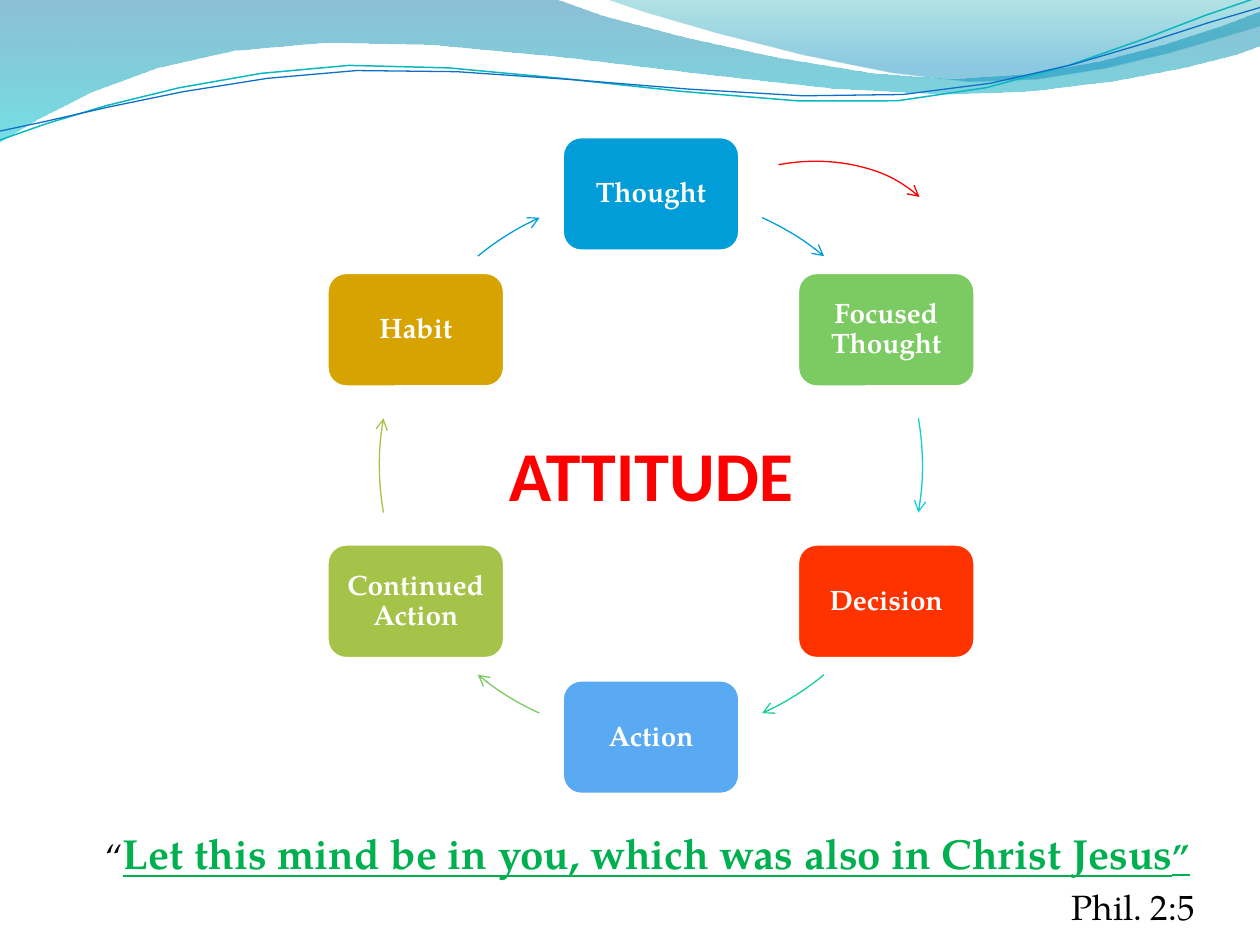
"""Build the attitude cycle slide."""
import math
from dataclasses import dataclass

import lxml.etree
import pptx
import pptx.dml.color
import pptx.enum.shapes
import pptx.enum.text
import pptx.oxml.ns
import pptx.util

Pt = pptx.util.Pt
qn = pptx.oxml.ns.qn
SHAPE = pptx.enum.shapes.MSO_SHAPE
ALIGN = pptx.enum.text.PP_ALIGN
ANCHOR = pptx.enum.text.MSO_ANCHOR
SERIF = "TeX Gyre Pagella"
CX, CY, RADIUS = 372, 266, 155.2
NODE_W, NODE_H = 101.5, 65.5


@dataclass
class Node:
    text: str
    fill: str
    arrow: str
    start: float
    end: float


@dataclass
class Band:
    points: list
    stops: list


@dataclass
class Wave:
    points: list
    color: str
    width: float


NODES = [
    Node("Thought", "009DD9", "009DD9", 294.2, 309.6),
    Node("Focused Thought", "7CCA62", "0BD0D9", 350, 10),
    Node("Decision", "FF3300", "10CF9B", 50.4, 65.8),
    Node("Action", "59AAF2", "7CCA62", 114.2, 129.6),
    Node("Continued Action", "A5C249", "A5C249", 170, 190),
    Node("Habit", "D6A300", "009DD9", 230.4, 245.8),
]
BANDS = [
    Band([[(0, 0), (316.8, -0.7)],
          [(316.8, -0.7), (343, 12), (478, 45), (546, 45)],
          [(546, 45), (614, 45), (690, 19), (720, 6.5)],
          [(720, 6.5), (720.7, 26)],
          [(720.7, 26), (708, 32), (626, 55), (537, 54)],
          [(537, 54), (448, 54), (275, 20), (185, 24.5)],
          [(185, 24.5), (93, 26), (33, 60), (-0.7, 81.4)]],
         [(0, "0074A1", 45), (1, "00C6CF", 55)]),
    Band([[(344.9, -0.7), (366, 8), (491, 44.6), (553.7, 46.8)],
          [(553.7, 46.8), (616, 49.7), (692, 23), (720, 15)],
          [(720, 15), (720, 0)]],
         [(0, "00A1A9", 30), (0.8, "008BBF", 45)]),
]
WAVES = [
    Wave([[(0, 80), (34.6, 67), (114, 41), (199.4, 37.4)],
          [(199.4, 37.4), (284, 34), (427, 64), (513, 57.6)],
          [(513, 57.6), (600, 51), (675, 10.8), (718.6, -1.4)]], "0AB8BF", 0.85),
    Wave([[(0, 74.9), (33.8, 69), (118, 44), (203.8, 40.3)],
          [(203.8, 40.3), (290, 36.7), (430, 60.5), (516, 54)],
          [(516, 54), (602, 48), (677, 15), (720, 4.3)]], "0F6FC6", 0.75),
]


def rgb(value: str):
    """Return a colour from a hex string."""
    return pptx.dml.color.RGBColor.from_string(value)


def add_text(p, text: str, *, size: float, color: str, font: str = SERIF,
             bold: bool = False, underline: bool = False):
    """Append a formatted run to a paragraph."""
    r = p.add_run()
    r.text = text
    r.font.name, r.font.size = font, Pt(size)
    r.font.bold, r.font.underline = bold, underline
    r.font.color.rgb = rgb(color)


def bezier(points: list, steps: int = 5) -> list:
    """Sample a Bezier segment of any degree, leaving out its start."""
    n = len(points) - 1
    steps = steps if n > 1 else 1
    return [tuple(sum(math.comb(n, k) * (1 - t) ** (n - k) * t ** k * pt[axis]
                      for k, pt in enumerate(points)) for axis in (0, 1))
            for t in (i / steps for i in range(1, steps + 1))]


def add_curve(s, segments: list, closed: bool):
    """Draw joined Bezier segments as one freeform."""
    x, y = segments[0][0]
    fb = s.shapes.build_freeform(round(x * 100), round(y * 100), scale=Pt(1) / 100)
    fb.add_line_segments([(round(px * 100), round(py * 100))
                          for seg in segments for px, py in bezier(seg)], close=closed)
    sp = fb.convert_to_shape()
    sp.shadow.inherit = False
    return sp


def add_band(s, band: Band):
    """Draw a translucent gradient band."""
    sp = add_curve(s, band.points, True)
    sp.line.fill.background()
    sp.fill.gradient()
    sp.fill.gradient_angle = 270
    for stop, (position, color, _) in zip(sp.fill.gradient_stops, band.stops):
        stop.position = position
        stop.color.rgb = rgb(color)
    for el, (_, _, opacity) in zip(sp._element.iter(qn("a:srgbClr")), band.stops):
        lxml.etree.SubElement(el, qn("a:alpha")).set("val", str(opacity * 1000))


def add_wave(s, wave: Wave):
    """Draw a thin wave line."""
    sp = add_curve(s, wave.points, False)
    sp.fill.background()
    sp.line.color.rgb = rgb(wave.color)
    sp.line.width = Pt(wave.width)


def add_arc(s, box: tuple, start: float, end: float, color: str, rotation: float = 0):
    """Draw an arc with an arrowhead at its end."""
    sp = s.shapes.add_shape(SHAPE.ARC, *map(Pt, box))
    sp.adjustments[0], sp.adjustments[1] = start * 0.6, end * 0.6
    sp.rotation = rotation
    sp.shadow.inherit = False
    sp.fill.background()
    sp.line.color.rgb = rgb(color)
    sp.line.width = Pt(0.75)
    ln = sp._element.spPr.find(qn("a:ln"))
    lxml.etree.SubElement(ln, qn("a:tailEnd")).set("type", "arrow")


def add_node(s, node: Node, angle: float):
    """Draw a labelled box at an angle on the circle."""
    x = CX + RADIUS * math.cos(math.radians(angle)) - NODE_W / 2
    y = CY + RADIUS * math.sin(math.radians(angle)) - NODE_H / 2
    sp = s.shapes.add_shape(SHAPE.ROUNDED_RECTANGLE, Pt(x), Pt(y), Pt(NODE_W), Pt(NODE_H))
    sp.shadow.inherit = False
    sp.fill.solid()
    sp.fill.fore_color.rgb = rgb(node.fill)
    sp.line.color.rgb = rgb("FFFFFF")
    sp.line.width = Pt(2)
    tf = sp.text_frame
    tf.word_wrap = True
    tf.vertical_anchor = ANCHOR.MIDDLE
    tf.margin_left = tf.margin_right = tf.margin_top = tf.margin_bottom = Pt(8)
    p = tf.paragraphs[0]
    p.alignment, p.line_spacing = ALIGN.CENTER, 0.9
    add_text(p, node.text, size=16, color="FFFFFF", bold=True)


def place(sp, left: float, top: float, width: float, height: float):
    """Move a placeholder and return its text frame."""
    sp.left, sp.top, sp.width, sp.height = map(Pt, (left, top, width, height))
    sp.text_frame.auto_size = pptx.enum.text.MSO_AUTO_SIZE.NONE
    return sp.text_frame


def add_verse(tf):
    """Write the verse and its reference."""
    verse, reference = tf.paragraphs[0], tf.add_paragraph()
    for p in (verse, reference):
        p.space_before = Pt(4)
        pPr = p._p.get_or_add_pPr()
        pPr.set("marL", str(Pt(21.6)))
        pPr.set("indent", str(-Pt(21.6)))
        lxml.etree.SubElement(pPr, qn("a:buNone"))
    add_text(verse, " “", size=20, color="000000")
    add_text(verse, "Let this mind be in you, which was also in Christ Jesus",
             size=24, color="00B050", bold=True, underline=True)
    add_text(verse, "”", size=20, color="00B050", bold=True, underline=True)
    reference.alignment = ALIGN.RIGHT
    add_text(reference, "Phil. 2:5", size=20, color="000000")


def main():
    """Build and save the presentation."""
    prs = pptx.Presentation()
    prs.slide_width, prs.slide_height = Pt(720), Pt(540)
    s = prs.slides.add_slide(prs.slide_layouts[1])
    for band in BANDS:
        add_band(s, band)
    for wave in WAVES:
        add_wave(s, wave)
    circle = (CX - RADIUS, CY - RADIUS, 2 * RADIUS, 2 * RADIUS)
    for i, node in enumerate(NODES):
        add_node(s, node, 60 * i - 90)
        add_arc(s, circle, node.start, node.end, node.arrow)
    tf = place(s.shapes.title, 48, 198, 648, 96.5)
    tf.vertical_anchor = ANCHOR.BOTTOM
    tf.margin_left = tf.margin_right = tf.margin_bottom = 0
    tf.paragraphs[0].alignment = ALIGN.CENTER
    add_text(tf.paragraphs[0], "ATTITUDE", size=40, color="FF0000", font="Calibri", bold=True)
    add_verse(place(s.placeholders[1], 48, 469.5, 642, 67.5))
    add_arc(s, (370, 93, 174, 130), 270, 337.1, "FF0000", 349.3)
    prs.save("out.pptx")


if __name__ == "__main__":
    main()
